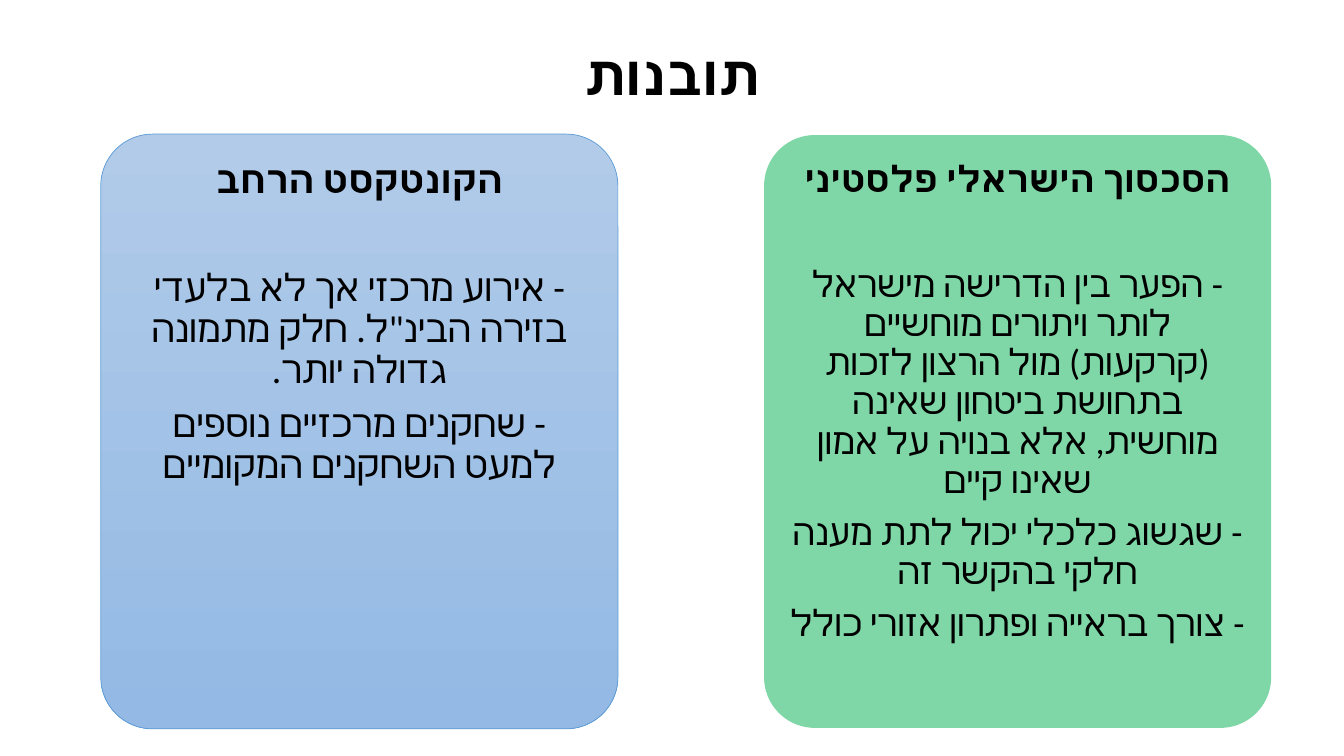
import pptx
import pptx.util
import pptx.dml.color
import pptx.enum.shapes
import pptx.enum.text
import pptx.oxml.ns
from lxml import etree

Pt = pptx.util.Pt

# Content
TITLE = "תובנות"
CARDS = [
    {
        "box": (72, 95.8, 369.4, 424.8), "size": 27,
        "gradient": ("B1CBE9", "93B9E4"), "line": "5B9BD5",
        "heading": "הקונטקסט הרחב",
        "points": [
            "- אירוע מרכזי אך לא בלעדי בזירה הבינ\"ל. חלק מתמונה גדולה יותר.",
            "- שחקנים מרכזיים נוספים למעט השחקנים המקומיים",
        ],
    },
    {
        "box": (545.8, 96.5, 362.2, 423.4), "size": 26,
        "fill": "00B050", "alpha": 50,
        "heading": "הסכסוך הישראלי פלסטיני",
        "points": [
            "- הפער בין הדרישה מישראל לותר ויתורים מוחשיים (קרקעות) מול הרצון לזכות "
            "בתחושת ביטחון שאינה מוחשית, אלא בנויה על אמון שאינו קיים",
            "- שגשוג כלכלי יכול לתת מענה חלקי בהקשר זה",
            "- צורך בראייה ופתרון אזורי כולל",
        ],
    },
]
FONT = "Calibri"
POINT_GAP = 0.35    # space after a point, in text sizes
HEADING_GAP = 1.79  # space after a heading, in text sizes


def color(hex_string):
    return pptx.dml.color.RGBColor.from_string(hex_string)


def add_child(parent, tag, **attrs):
    child = etree.SubElement(parent, pptx.oxml.ns.qn(tag))
    for name, value in attrs.items():
        child.set(name, str(value))


def write(p, text, size, bold=False, after=0):
    """Fill one centred right-to-left paragraph."""
    p.alignment = pptx.enum.text.PP_ALIGN.CENTER
    p.line_spacing = 0.9
    p.space_after = Pt(after)
    p._p.get_or_add_pPr().set("rtl", "1")
    r = p.add_run()
    r.text = text
    r.font.name, r.font.size, r.font.bold = FONT, Pt(size), bold
    r.font.color.rgb = color("000000")
    add_child(r.font._element, "a:cs", typeface=FONT)


def add_card(s, card):
    sp = s.shapes.add_shape(pptx.enum.shapes.MSO_SHAPE.ROUNDED_RECTANGLE,
                            *map(Pt, card["box"]))
    sp.adjustments[0] = 0.1
    sp.shadow.inherit = False

    # Fill and outline
    if "gradient" in card:
        sp.fill.gradient()
        sp.fill.gradient_angle = 270
        for stop, shade in zip(sp.fill.gradient_stops, card["gradient"]):
            stop.color.rgb = color(shade)
    else:
        sp.fill.solid()
        sp.fill.fore_color.rgb = color(card["fill"])
        solid = sp._element.spPr.find(pptx.oxml.ns.qn("a:solidFill"))
        add_child(solid[0], "a:alpha", val=card["alpha"] * 1000)
    if "line" in card:
        sp.line.color.rgb = color(card["line"])
        sp.line.width = Pt(0.5)
    else:
        sp.line.fill.background()

    # Heading and points
    tf = sp.text_frame
    tf.word_wrap = True
    tf.vertical_anchor = pptx.enum.text.MSO_ANCHOR.TOP
    tf.margin_left = tf.margin_right = tf.margin_top = tf.margin_bottom = Pt(8)
    size = card["size"]
    write(tf.paragraphs[0], card["heading"], size, bold=True, after=HEADING_GAP * size)
    for point in card["points"]:
        write(tf.add_paragraph(), point, size, after=POINT_GAP * size)


def main():
    prs = pptx.Presentation()
    prs.slide_width, prs.slide_height = Pt(960), Pt(540)
    s = prs.slides.add_slide(prs.slide_layouts[6])

    # Title
    tf = s.shapes.add_textbox(Pt(41.8), Pt(28.8), Pt(877), Pt(53.3)).text_frame
    tf.word_wrap = True
    tf.vertical_anchor = pptx.enum.text.MSO_ANCHOR.MIDDLE
    write(tf.paragraphs[0], TITLE, 39.6, bold=True)

    # Cards
    for card in CARDS:
        add_card(s, card)

    prs.save("out.pptx")


if __name__ == "__main__":
    main()
